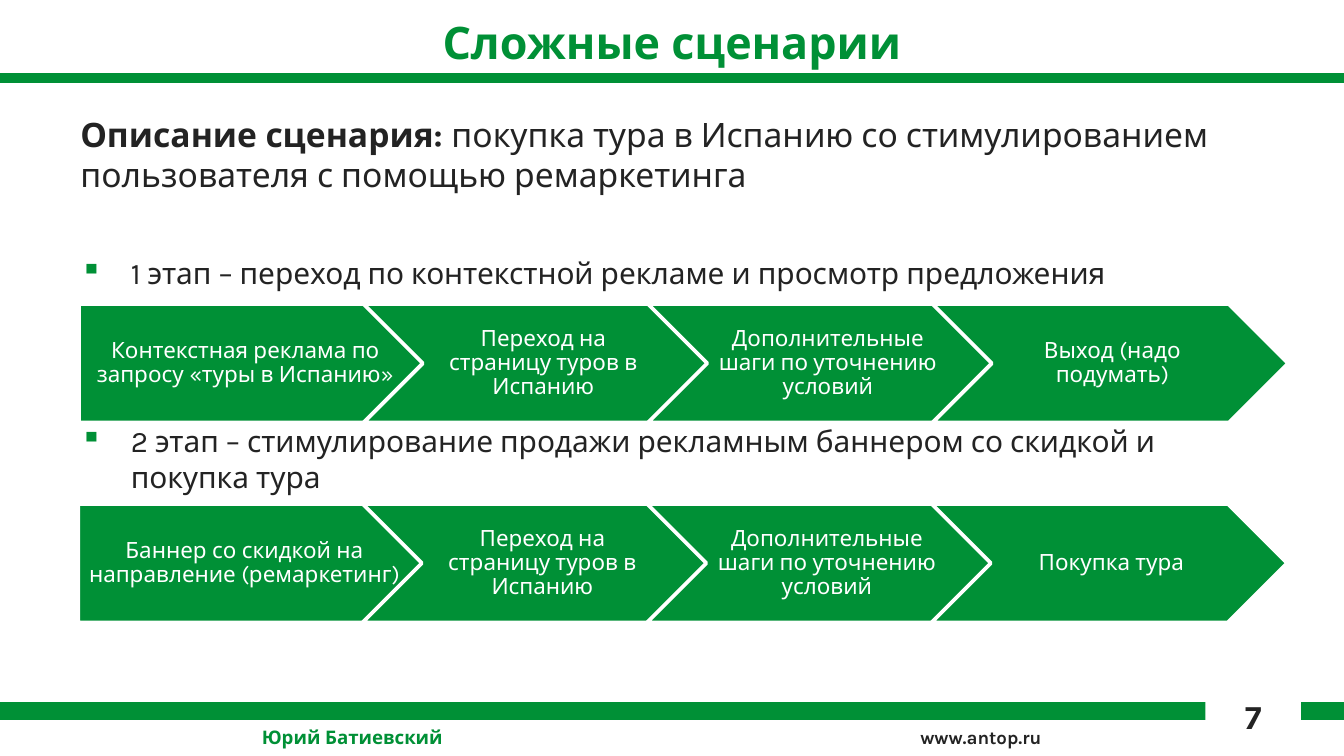
from dataclasses import dataclass

from lxml import etree
from pptx import Presentation
from pptx.dml.color import RGBColor
from pptx.enum.shapes import MSO_CONNECTOR, MSO_SHAPE
from pptx.enum.text import MSO_ANCHOR, MSO_AUTO_SIZE, PP_ALIGN
from pptx.oxml.ns import qn
from pptx.util import Pt

STRAIGHT = MSO_CONNECTOR.STRAIGHT
RECTANGLE, PENTAGON, CHEVRON = MSO_SHAPE.RECTANGLE, MSO_SHAPE.PENTAGON, MSO_SHAPE.CHEVRON
TOP, MIDDLE = MSO_ANCHOR.TOP, MSO_ANCHOR.MIDDLE
LEFT, CENTER = PP_ALIGN.LEFT, PP_ALIGN.CENTER
NO_FIT = MSO_AUTO_SIZE.NONE
TITLE_ONLY = 5
SLIDE_WIDTH, SLIDE_HEIGHT = 720, 405


@dataclass(frozen=True)
class Theme:
    """Colours, typeface and type sizes of the deck."""

    font: str = "Karla"
    green: str = "009036"
    ink: str = "232323"
    white: str = "FFFFFF"
    title: int = 24
    lead: int = 18
    body: int = 16
    step: int = 12
    footer: int = 10


def apply(target, values):
    """Set every attribute named in values on target."""
    for name, value in values.items():
        setattr(target, name, value)


class SlideBuilder:
    """Draws the elements of one slide in a shared style."""

    def __init__(self, slide, theme):
        """Keep the slide and the theme."""
        self.slide = slide
        self.theme = theme

    def frame(self, shape, anchor=TOP, insets=(7.2, 3.6, 7.2, 3.6)):
        """Prepare the text frame of a shape and return it."""
        left, top, right, bottom = map(Pt, insets)
        apply(shape.text_frame, {
            "word_wrap": True, "auto_size": NO_FIT, "vertical_anchor": anchor,
            "margin_left": left, "margin_top": top,
            "margin_right": right, "margin_bottom": bottom,
        })
        return shape.text_frame

    def add_text(self, paragraph, text, size, color, bold=False, **layout):
        """Add a styled run to a paragraph and lay the paragraph out."""
        apply(paragraph, layout)
        run = paragraph.add_run()
        run.text = text
        apply(run.font, {"name": self.theme.font, "size": Pt(size), "bold": bold})
        run.font.color.rgb = RGBColor.from_string(color)

    def title(self, text, box):
        """Place and fill the title placeholder."""
        title = self.slide.shapes.title
        apply(title, dict(zip(("left", "top", "width", "height"), map(Pt, box))))
        paragraph = self.frame(title, MIDDLE).paragraphs[0]
        self.add_text(paragraph, text, self.theme.title, self.theme.green, True,
                      alignment=CENTER)

    def rule(self, y, weight):
        """Draw a green rule across the slide."""
        line = self.slide.shapes.add_connector(STRAIGHT, 0, Pt(y), Pt(SLIDE_WIDTH), Pt(y))
        line.line.width = Pt(weight)
        line.line.color.rgb = RGBColor.from_string(self.theme.green)
        etree.SubElement(line._element.spPr, qn("a:effectLst"))

    def text_box(self, box):
        """Add a text box and return its frame."""
        return self.frame(self.slide.shapes.add_textbox(*map(Pt, box)))

    def label(self, text, box, color):
        """Add a bold footer label."""
        paragraph = self.text_box(box).paragraphs[0]
        self.add_text(paragraph, text, self.theme.footer, color, True, alignment=LEFT)

    def bullet(self, frame, text, space_before):
        """Add a paragraph with a green square bullet and a hanging indent."""
        paragraph = frame.add_paragraph()
        properties = paragraph._p.get_or_add_pPr()
        properties.set("marL", str(Pt(27)))
        properties.set("indent", str(Pt(-27)))
        color = etree.SubElement(properties, qn("a:buClr"))
        etree.SubElement(color, qn("a:srgbClr"), val=self.theme.green)
        etree.SubElement(properties, qn("a:buChar"), char="▪")
        self.add_text(paragraph, text, self.theme.body, self.theme.ink,
                      space_before=Pt(space_before))

    def block(self, shapes, kind, box, fill):
        """Add a filled preset shape without shadow."""
        block = shapes.add_shape(kind, *map(Pt, box))
        block.shadow.inherit = False
        block.fill.solid()
        block.fill.fore_color.rgb = RGBColor.from_string(fill)
        return block

    def page_number(self, text, box):
        """Cover the lower rule with a white block holding the page number."""
        block = self.block(self.slide.shapes, RECTANGLE, box, self.theme.white)
        block.line.fill.background()
        self.add_text(self.frame(block).paragraphs[0], text, self.theme.lead, self.theme.ink,
                      True, alignment=CENTER, line_spacing=1.15)

    def process(self, steps, left, top, width=190.5, height=63.5):
        """Draw a grouped row of arrows, each overlapping the one before by a fifth."""
        shapes = self.slide.shapes.add_group_shape().shapes
        for index, step in enumerate(steps):
            kind, inset = (CHEVRON, 3.6) if index else (PENTAGON, 5)
            box = (left + index * width * 0.8, top, width, height)
            arrow = self.block(shapes, kind, box, self.theme.green)
            arrow.line.width = Pt(2)
            arrow.line.color.rgb = RGBColor.from_string(self.theme.white)
            frame = self.frame(arrow, MIDDLE, (inset, 2.9, 1.4, 2.9))
            self.add_text(frame.paragraphs[0], step, self.theme.step, self.theme.white,
                          alignment=CENTER, line_spacing=0.9)


def main():
    """Build the scenario slide and save it."""
    theme = Theme()
    deck = Presentation()
    apply(deck, {"slide_width": Pt(SLIDE_WIDTH), "slide_height": Pt(SLIDE_HEIGHT)})
    page = SlideBuilder(deck.slides.add_slide(deck.slide_layouts[TITLE_ONLY]), theme)

    page.rule(381, 10)
    page.label("www.antop.ru", (486, 385.2, 175, 19.4), theme.ink)
    page.rule(41.8, 5)
    page.title("Сложные сценарии", (36.7, 11.5, 646.6, 21.6))

    scenario = page.text_box((36, 57.6, 648, 273.6))
    lead = scenario.paragraphs[0]
    page.add_text(lead, "Описание сценария: ", theme.lead, theme.ink, True)
    page.add_text(lead, "покупка тура в Испанию со стимулированием пользователя "
                  "с помощью ремаркетинга", theme.lead, theme.ink)
    page.bullet(scenario, "1 этап – переход по контекстной рекламе и просмотр предложения", 32)
    page.bullet(scenario, "2 этап – стимулирование продажи рекламным баннером "
                "со скидкой и покупка тура", 71)

    page.label("Юрий Батиевский", (133.2, 385.2, 419.8, 13), theme.green)
    page.page_number("7", (645.8, 365.8, 51.1, 38.9))

    shared_steps = ("Переход на страницу туров в Испанию",
                    "Дополнительные шаги по уточнению условий")
    page.process(("Контекстная реклама по запросу «туры в Испанию»", *shared_steps,
                  "Выход (надо подумать)"), 42.4, 162.9)
    page.process(("Баннер со скидкой на направление (ремаркетинг)", *shared_steps,
                  "Покупка тура"), 41.9, 270)

    deck.save("out.pptx")


if __name__ == "__main__":
    main()
